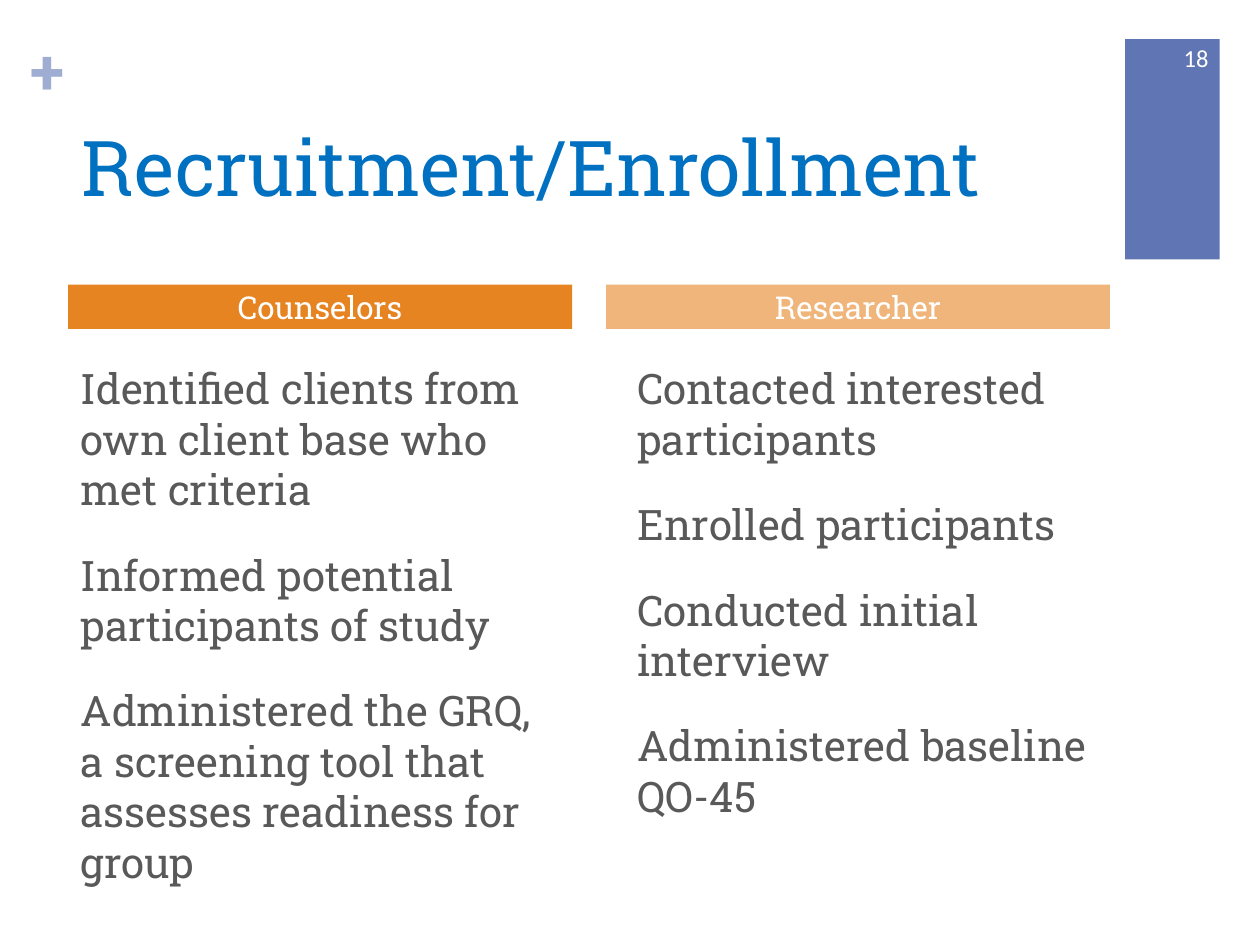
import pptx
import pptx.dml.color
import pptx.enum.shapes
import pptx.enum.text
import pptx.oxml
import pptx.util

Inches = pptx.util.Inches
Pt = pptx.util.Pt
ALIGN = pptx.enum.text.PP_ALIGN
ANCHOR = pptx.enum.text.MSO_ANCHOR
SLAB = "Roboto Slab"


def color(hex_string):
    return pptx.dml.color.RGBColor.from_string(hex_string)


def write(shape, box, lines, size, hex_string, align=ALIGN.LEFT,
          anchor=ANCHOR.TOP, font_name=SLAB, bold=False):
    """Place a shape and fill it with one formatted paragraph per line."""
    shape.left, shape.top, shape.width, shape.height = map(Inches, box)
    frame = shape.text_frame
    frame.text = "\n".join(lines)
    frame.word_wrap = True
    frame.auto_size = pptx.enum.text.MSO_AUTO_SIZE.NONE
    frame.vertical_anchor = anchor
    for paragraph in frame.paragraphs:
        paragraph.alignment = align
        paragraph.font.name = font_name
        paragraph.font.size = Pt(size)
        paragraph.font.bold = bold
        paragraph.font.color.rgb = color(hex_string)


presentation = pptx.Presentation()
presentation.slide_width, presentation.slide_height = Inches(10), Inches(7.5)
slide = presentation.slides.add_slide(
    presentation.slide_layouts.get_by_name("Comparison"))
shapes = slide.shapes

# Blue block with the slide number
block = shapes.add_shape(pptx.enum.shapes.MSO_SHAPE.RECTANGLE, Inches(8.93),
                         Inches(0.31), Inches(0.75), Inches(1.75))
block.shadow.inherit = False
block.fill.solid()
block.fill.fore_color.rgb = color("6076B4")
block.line.fill.background()
number = shapes.add_textbox(0, 0, 0, 0)
write(number, (9.08, 0.26, 0.61, 0.4), ["18"], 14, "FFFFFF",
      ALIGN.RIGHT, ANCHOR.MIDDLE, "Calibri")

# Plus sign in the corner
plus = shapes.add_textbox(0, 0, 0, 0)
write(plus, (0.24, 0.25, 0.29, 0.61), ["+"], 36, "A0ADD2", bold=True)
frame = plus.text_frame
frame.margin_left = frame.margin_right = 0
frame.margin_top = frame.margin_bottom = 0

# Title
write(shapes.title, (0.55, 0.9, 8.26, 0.85), ["Recruitment/Enrollment"],
      44, "0070C0")

# Two columns: heading bar and list
columns = [
    ("Counselors", "E68422", 0.54, (0.54, 2.83, 4, 4.67), [
        "Identified clients from own client base who met criteria",
        "Informed potential participants of study",
        "Administered the GRQ, a screening tool that assesses readiness "
        "for group",
    ]),
    ("Researcher", "F0B57A", 4.81, (4.96, 2.83, 3.96, 3.87), [
        "Contacted interested participants",
        "Enrolled participants",
        "Conducted initial interview",
        "Administered baseline QO-45",
    ]),
]
placeholders = {item.placeholder_format.idx: item
                for item in slide.placeholders}
for column, (heading, fill, left, box, lines) in enumerate(columns):
    bar = placeholders[1 + 2 * column]
    write(bar, (left, 2.26, 4, 0.35), [heading], 18, "FFFFFF",
          ALIGN.CENTER, ANCHOR.MIDDLE)
    bar.fill.solid()
    bar.fill.fore_color.rgb = color(fill)
    bar.text_frame.margin_top = bar.text_frame.margin_bottom = 0
    bar.text_frame.paragraphs[0].space_before = Pt(0)

    body = placeholders[2 + 2 * column]
    write(body, box, lines, 24, "595959")
    for paragraph in body.text_frame.paragraphs:
        paragraph.space_before = Pt(20)
        # No bullet and no hanging indent
        properties = paragraph._p.get_or_add_pPr()
        properties.set("marL", "0")
        properties.set("indent", "0")
        properties.insert_element_before(
            pptx.oxml.parse_xml(
                '<a:buNone xmlns:a="http://schemas.openxmlformats.org/'
                'drawingml/2006/main"/>'),
            "a:tabLst", "a:defRPr", "a:extLst")

presentation.save("out.pptx")
